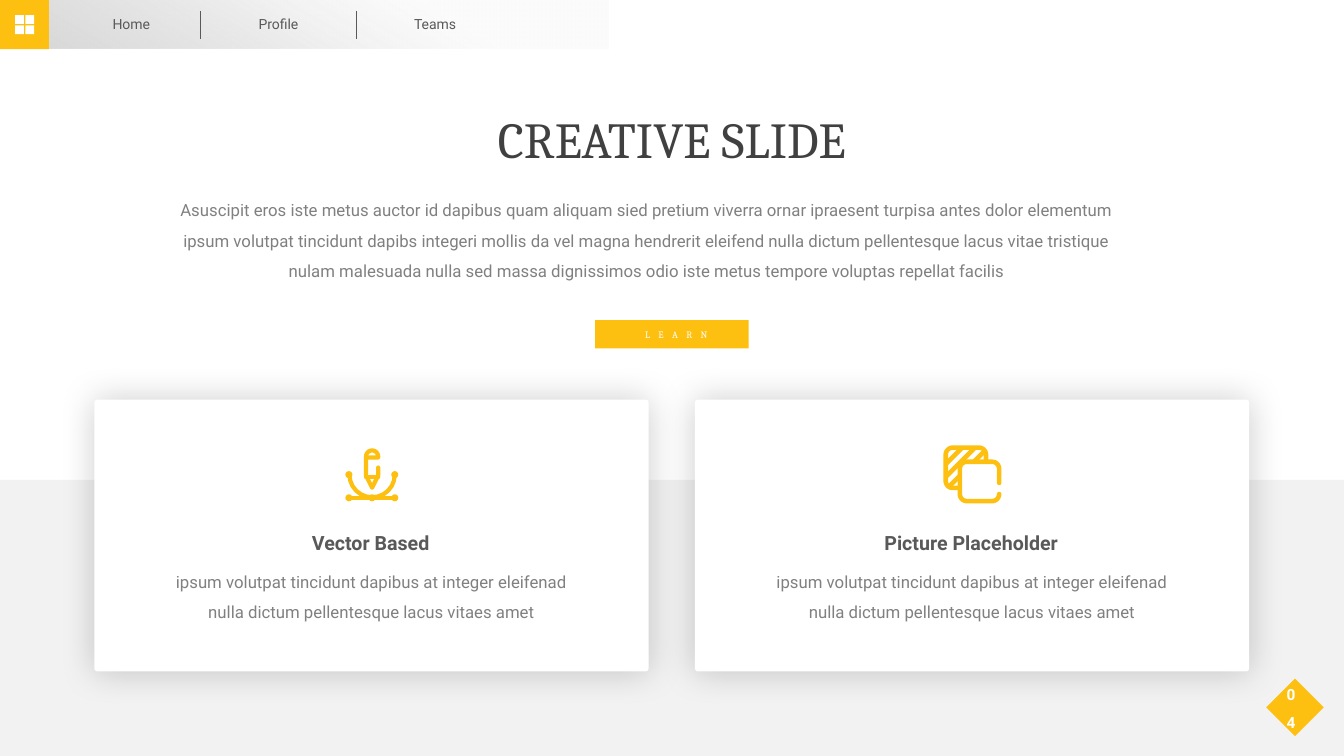
from math import cos, radians, sin

from lxml import etree
from pptx import Presentation
from pptx.dml.color import RGBColor
from pptx.enum.shapes import MSO_CONNECTOR, MSO_SHAPE
from pptx.enum.text import MSO_ANCHOR, MSO_AUTO_SIZE, PP_ALIGN
from pptx.oxml import parse_xml
from pptx.oxml.ns import nsdecls, qn
from pptx.util import Cm, Pt

COLORS = {
    "accent": "FDC010",
    "white": "FFFFFF",
    "band": "F2F2F2",
    "nav": "D9D9D9",
    "heading": "404040",
    "label": "595959",
    "body": "808080",
    "shadow": "000000",
}
ICON_UNIT = 0.0254  # cm per step of the icon grids
INTRO = (
    "Asuscipit eros iste metus auctor id dapibus quam aliquam sied pretium viverra ornar "
    "ipraesent turpisa antes dolor elementum ipsum volutpat tincidunt dapibs integeri mollis "
    "da vel magna hendrerit eleifend nulla dictum pellentesque lacus vitae tristique nulam "
    "malesuada nulla sed massa dignissimos odio iste metus tempore voluptas repellat facilis"
)
CARD_BODY = (
    "ipsum volutpat tincidunt dapibus at integer eleifenad "
    "nulla dictum pellentesque lacus vitaes amet"
)


def rgb(color):
    return RGBColor.from_string(COLORS[color])


def paint(shape, color):
    shape.shadow.inherit = False
    shape.fill.solid()
    shape.fill.fore_color.rgb = rgb(color)
    shape.line.fill.background()


def add_block(slide, preset, left, top, width, height, color, corner=None):
    block = slide.shapes.add_shape(preset, Cm(left), Cm(top), Cm(width), Cm(height))
    paint(block, color)
    if corner is not None:
        block.adjustments[0] = corner
    return block


def add_text(slide, text, left, top, width, height, *, size, color, font="Roboto",
             bold=False, line_spacing=1.0, tracking=0, anchor=MSO_ANCHOR.TOP):
    box = slide.shapes.add_textbox(Cm(left), Cm(top), Cm(width), Cm(height))
    frame = box.text_frame
    frame.margin_left = frame.margin_right = frame.margin_top = frame.margin_bottom = 0
    frame.word_wrap = True
    frame.auto_size = MSO_AUTO_SIZE.SHAPE_TO_FIT_TEXT
    frame.vertical_anchor = anchor
    paragraph = frame.paragraphs[0]
    paragraph.alignment = PP_ALIGN.CENTER
    paragraph.line_spacing = line_spacing
    run = paragraph.add_run()
    run.text = text
    run.font.name = font
    run.font.size = Pt(size)
    run.font.bold = bold
    run.font.color.rgb = rgb(color)
    if tracking:
        run.font._element.set("spc", str(tracking * 100))


def add_separator(slide, x, top, bottom):
    separator = slide.shapes.add_connector(
        MSO_CONNECTOR.STRAIGHT, Cm(x), Cm(top), Cm(x), Cm(bottom))
    separator.line.color.rgb = rgb("label")
    separator.line.width = Pt(0.5)
    etree.SubElement(separator._element.spPr, qn("a:effectLst"))


def add_soft_shadow(card):
    effects = card._element.spPr.find(qn("a:effectLst"))
    effects.append(parse_xml(
        f'<a:outerShdw {nsdecls("a")} blurRad="{Pt(25)}" dist="0" dir="0" algn="ctr" '
        f'rotWithShape="0"><a:srgbClr val="{COLORS["shadow"]}"><a:alpha val="20000"/>'
        '</a:srgbClr></a:outerShdw>'))


def fade(bar):
    """Give the navigation bar its gradient with partly transparent stops."""
    stops = [(30, "band", 30), (65, "nav", 55), (100, "nav", 100)]
    stop_xml = "".join(
        f'<a:gs pos="{pos}000"><a:srgbClr val="{COLORS[color]}">'
        f'<a:alpha val="{alpha}000"/></a:srgbClr></a:gs>' for pos, color, alpha in stops)
    solid = bar._element.spPr.find(qn("a:solidFill"))
    solid.getparent().replace(solid, parse_xml(
        f'<a:gradFill {nsdecls("a")} rotWithShape="1"><a:gsLst>{stop_xml}</a:gsLst>'
        '<a:lin ang="7200000" scaled="0"/></a:gradFill>'))


def arc(x, y, radius, start, end):
    """Points on a clockwise arc when end is above start, in degrees from the right."""
    angles = [start + (end - start) * step / 12 for step in range(13)]
    return [(x + radius * cos(radians(a)), y + radius * sin(radians(a))) for a in angles]


def add_stroke(slide, left, top, points, fill=None, width=3.25):
    unit = Cm(ICON_UNIT)
    (x, y), *rest = [(px * unit, py * unit) for px, py in points]
    builder = slide.shapes.build_freeform(round(x), round(y))
    builder.add_line_segments(rest, close=False)
    stroke = builder.convert_to_shape(Cm(left), Cm(top))
    stroke.shadow.inherit = False
    if fill:
        stroke.fill.solid()
        stroke.fill.fore_color.rgb = rgb(fill)
    else:
        stroke.fill.background()
    stroke.line.color.rgb = rgb("accent")
    stroke.line.width = Pt(width)
    outline = stroke.line._get_or_add_ln()
    outline.set("cap", "rnd")
    etree.SubElement(outline, qn("a:round"))


def add_pen_icon(slide, left, top):
    nib = [(32, 19), (32, 27), (26, 39), (20, 27), (20, 8)]
    cap = arc(26, 8, 6, 180, 360) + [(32, 9), (20, 9)]
    for points in (
        arc(26, 26, 22.5, 180, 0),
        [(3, 49), (48, 49)],
        nib + cap,
        [(20, 28.5), (32, 28.5)],
    ):
        add_stroke(slide, left, top, points, width=3)
    for x, y in [(3, 26), (48.5, 26), (3, 49), (26, 49), (48.5, 49)]:
        add_block(slide, MSO_SHAPE.OVAL, left + (x - 3.5) * ICON_UNIT,
                  top + (y - 3.5) * ICON_UNIT, 7 * ICON_UNIT, 7 * ICON_UNIT, "accent")


def add_layers_icon(slide, left, top):
    back = ([(14, 42), (9, 42)] + arc(9, 35, 7, 90, 180) + arc(9, 9, 7, 180, 270)
            + arc(35, 9, 7, 270, 360) + [(42, 14)])
    front = ([(55, 37)] + arc(48, 23, 7, 0, -90) + arc(23, 23, 7, 270, 180)
             + arc(23, 48, 7, 180, 90) + arc(48, 48, 7, 90, 0))
    add_stroke(slide, left, top, back)
    for start, end in [((3, 17.5), (17.5, 3)), ((3, 30), (30, 3)), ((7, 39), (40, 6))]:
        add_stroke(slide, left, top, [start, end])
    add_stroke(slide, left, top, front, fill="white")


def add_menu_icon(slide, left, top):
    pane, pitch = Cm(0.22), Cm(0.26)
    builder = slide.shapes.build_freeform(0, 0)
    for x, y in [(0, 0), (pitch, 0), (0, pitch), (pitch, pitch)]:
        builder.move_to(x, y)
        builder.add_line_segments([(x + pane, y), (x + pane, y + pane), (x, y + pane)])
    paint(builder.convert_to_shape(Cm(left), Cm(top)), "white")


def add_card(slide, left, title, draw_icon, icon_x, icon_y):
    width = 13.97
    card = add_block(slide, MSO_SHAPE.ROUNDED_RECTANGLE, left, 10.07, width, 6.85,
                     "white", corner=0.011)
    add_soft_shadow(card)
    draw_icon(slide, icon_x, icon_y)
    add_text(slide, title, left - 0.02, 13.08, width, 0.79, size=14, color="label",
             bold=True, line_spacing=1.5)
    add_text(slide, CARD_BODY, left + 2, 14.15, width - 4, 1.45, size=12,
             color="body", line_spacing=1.5)


def add_navigation(slide):
    add_block(slide, MSO_SHAPE.RECTANGLE, 0, 0, 1.24, 1.24, "accent")
    add_menu_icon(slide, 0.38, 0.38)
    fade(add_block(slide, MSO_SHAPE.RECTANGLE, 1.24, 0, 14.1, 1.23, "nav"))
    for label, center in [("Home", 3.31), ("Profile", 7.02), ("Teams", 10.97)]:
        add_text(slide, label, center - 1, 0.4, 2, 0.43, size=10, color="label")
    for x in (5.05, 8.99):
        add_separator(slide, x, 0.28, 0.99)


def add_page_number(slide):
    add_block(slide, MSO_SHAPE.DIAMOND, 31.92, 17.1, 1.45, 1.45, "accent")
    add_text(slide, "04", 32.42, 17.04, 0.25, 1.4, size=11, color="white", bold=True,
             line_spacing=1.5, anchor=MSO_ANCHOR.MIDDLE)


def main():
    deck = Presentation()
    deck.slide_width, deck.slide_height = Cm(33.88), Cm(19.05)
    slide = deck.slides.add_slide(deck.slide_layouts[6])

    add_block(slide, MSO_SHAPE.RECTANGLE, 0, 12.09, 33.88, 6.96, "band")
    add_card(slide, 17.52, "Picture Placeholder", add_layers_icon, 23.79, 11.23)
    add_card(slide, 2.38, "Vector Based", add_pen_icon, 8.72, 11.3)
    add_text(slide, INTRO, 4.39, 4.79, 23.83, 2.24, size=12, color="body", line_spacing=1.5)
    add_text(slide, "CREATIVE SLIDE", 10.85, 2.72, 12.17, 1.55, size=36,
             color="heading", font="Cambria")
    add_block(slide, MSO_SHAPE.ROUNDED_RECTANGLE, 15, 8.07, 3.87, 0.71, "accent", corner=0)
    add_text(slide, "LEARN", 15.55, 8.28, 3, 0.3, size=7, color="white",
             font="Cambria", tracking=6)
    add_navigation(slide)
    add_page_number(slide)
    deck.save("out.pptx")


if __name__ == "__main__":
    main()
